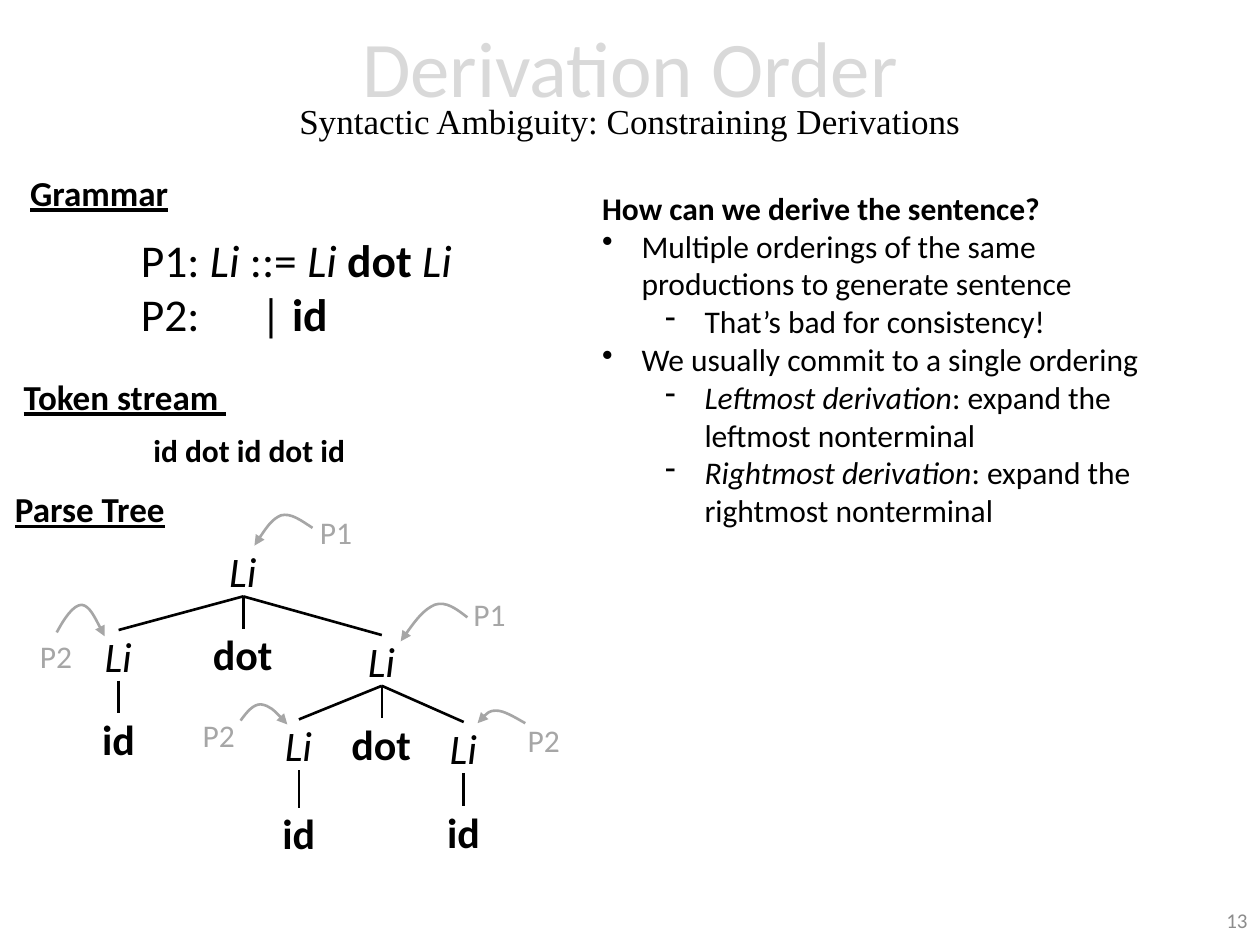
from lxml import etree
from pptx import Presentation
from pptx.dml.color import RGBColor
from pptx.enum.shapes import MSO_CONNECTOR
from pptx.enum.text import MSO_ANCHOR, MSO_AUTO_SIZE, PP_ALIGN
from pptx.oxml.ns import qn
from pptx.util import Pt

LINE = MSO_CONNECTOR.STRAIGHT
MIDDLE = MSO_ANCHOR.MIDDLE
NONE, GROW = MSO_AUTO_SIZE.NONE, MSO_AUTO_SIZE.SHAPE_TO_FIT_TEXT
LEFT, CENTER, RIGHT = PP_ALIGN.LEFT, PP_ALIGN.CENTER, PP_ALIGN.RIGHT
BLACK = RGBColor(0, 0, 0)
PALE = RGBColor(0xD9, 0xD9, 0xD9)
GRAY = RGBColor(0xA6, 0xA6, 0xA6)
DIM = RGBColor(0x8C, 0x8C, 0x8C)
BOLD, SLANT = {"bold": True}, {"italic": True}

deck = Presentation()
deck.slide_width, deck.slide_height = Pt(720), Pt(540)
slide = deck.slides.add_slide(deck.slide_layouts[5])
shapes = slide.shapes


def write(para, text, size, color=BLACK, **extra):
    run = para.add_run()
    run.text = text
    form = {"name": "Calibri", "size": Pt(size), **extra}
    for key, value in form.items():
        setattr(run.font, key, value)
    run.font.color.rgb = color


def add_box(left, top, width, height, **extra):
    frame = shapes.add_textbox(Pt(left), Pt(top), Pt(width), Pt(height)).text_frame
    form = {"word_wrap": True, "auto_size": NONE, **extra}
    for key, value in form.items():
        setattr(frame, key, value)
    return frame


title = shapes.title
spot = {"left": 0, "top": 0.7, "width": 720, "height": 104.4}
for key, value in spot.items():
    setattr(title, key, Pt(value))
title.text_frame.auto_size = NONE
title.text_frame.vertical_anchor = MIDDLE
para = title.text_frame.paragraphs[0]
para.alignment, para.line_spacing = CENTER, 0.7
write(para, "Derivation Order", 45, PALE)
para.add_line_break()
write(para, "Syntactic Ambiguity: Constraining Derivations", 20, name="Times New Roman")

para = add_box(558, 511.2, 162, 28.8, vertical_anchor=MIDDLE).paragraphs[0]
para.alignment = RIGHT
write(para, "13", 12, DIM)

heads = [
    ("Grammar", 10.1, 97.2, 104.4, 70.6),
    ("Token stream ", 6.5, 213.8, 161.3, 29.5),
    ("Parse Tree", 1.4, 277.9, 104.4, 43.9),
]
for text, *place in heads:
    para = add_box(*place).paragraphs[0]
    para.line_spacing, para.space_before = 0.9, Pt(10)
    write(para, text, 20, bold=True, underline=True)

rules = add_box(73.4, 128.9, 221.8, 70.6, auto_size=GROW)
para = rules.paragraphs[0]
for text, form in [("P1:", {}), (" Li", SLANT), (" ::= ", {}),
                   ("Li ", SLANT), ("dot ", BOLD), ("Li", SLANT)]:
    write(para, text, 26, **form)
para = rules.add_paragraph()
write(para, "P2:\t| ", 26)
write(para, "id", 26, bold=True)
tabs = etree.SubElement(para._p.get_or_add_pPr(), qn("a:tabLst"))
etree.SubElement(tabs, qn("a:tab"), pos=str(Pt(68.5)), algn="l")

tokens = add_box(80.6, 242.6, 129.6, 28.8, word_wrap=False, auto_size=GROW)
write(tokens.paragraphs[0], "id dot id dot id", 18, bold=True)

HIGH = 29
widths = {"Li": 30.2, "dot": 49, "id": 33.1}
nodes = [
    ("Li", 139, 311.8, None),
    ("Li", 67.8, 360, 0),
    ("dot", 139, 359.3, 0),
    ("Li", 218.2, 362.9, 0),
    ("id", 67.8, 407.5, 1),
    ("Li", 170.8, 411.1, 3),
    ("dot", 218.2, 410.4, 3),
    ("Li", 265, 412.6, 3),
    ("id", 170.8, 461.5, 5),
    ("id", 265, 460.8, 7),
]
for text, mid, top, parent in nodes:
    wide = widths[text]
    frame = add_box(mid - wide / 2, top, wide, HIGH, word_wrap=False,
                    auto_size=GROW, margin_top=0, margin_bottom=0)
    write(frame.paragraphs[0], text, 24, **(SLANT if text == "Li" else BOLD))
    if parent is not None:
        start, base = nodes[parent][1:3]
        edge = shapes.add_connector(LINE, Pt(start), Pt(base + HIGH), Pt(mid), Pt(top))
        edge.line.color.rgb, edge.line.width = BLACK, Pt(1.5)
        etree.SubElement(edge._element.spPr, qn("a:effectLst"))

marks = [
    ("P2", 294.5, 408.2), ("P2", 108.7, 405.4), ("P1", 263.5, 336.2),
    ("P2", 15.8, 360.7), ("P1", 175.7, 289.4),
]
for text, left, top in marks:
    frame = add_box(left, top, 33.1, HIGH, word_wrap=False, auto_size=GROW)
    write(frame.paragraphs[0], text, 18, GRAY)

curves = [
    [(178.6, 301.7), (172.1, 297.4), (166.3, 293), (160.6, 294.5),
     (155.5, 296.6), (150.5, 303.8), (145.4, 311.8)],
    [(267.1, 352.8), (260.6, 347.8), (254.9, 343.4), (248.4, 345.6),
     (241.9, 348.5), (235.4, 357.1), (229, 366.5)],
    [(32.4, 361.4), (36.7, 353.5), (41.8, 345.6), (46.8, 345.6),
     (51.1, 346.3), (55.4, 355), (59.8, 363.6)],
    [(137.5, 411.8), (141.1, 406.8), (144.7, 402.5), (149, 402.5),
     (154.1, 403.2), (159.1, 408.2), (164.2, 414)],
    [(300.2, 413.3), (293.8, 409.7), (288, 406.1), (283.7, 406.1),
     (279.4, 406.1), (275.8, 409.7), (272.9, 413.3)],
]
for curve in curves:
    first, *rest = [(Pt(x), Pt(y)) for x, y in curve]
    pen = shapes.build_freeform(*first)
    pen.add_line_segments(rest, close=False)
    arrow = pen.convert_to_shape()
    arrow.shadow.inherit = False
    arrow.fill.background()
    arrow.line.color.rgb, arrow.line.width = GRAY, Pt(1.5)
    etree.SubElement(arrow.line._get_or_add_ln(), qn("a:tailEnd"), type="triangle")
    steps = list(arrow._element.iter(qn("a:lnTo")))
    trail = steps[0].getparent()
    for start in range(0, len(steps), 3):
        bend = etree.SubElement(trail, qn("a:cubicBezTo"))
        for step in steps[start:start + 3]:
            bend.append(step[0])
            trail.remove(step)

points = [
    (None, 0, [("How can we derive the sentence?", BOLD)]),
    ("•", 22.5, [("Multiple orderings of the same productions to generate sentence", {})]),
    ("-", 58.5, [("That’s bad for consistency!", {})]),
    ("•", 22.5, [("We usually commit to a single ordering", {})]),
    ("-", 58.5, [("Leftmost derivation", SLANT), (": expand the leftmost nonterminal", {})]),
    ("-", 58.5, [("Rightmost derivation", SLANT), (": expand the rightmost nonterminal", {})]),
]
panel = add_box(337, 104.4, 328.3, 225.4, auto_size=GROW)
for row, (mark, left, runs) in enumerate(points):
    para = panel.add_paragraph() if row else panel.paragraphs[0]
    para.alignment = LEFT
    for text, form in runs:
        write(para, text, 18, **form)
    if mark:
        para.level = int(mark == "-")
        props = para._p.get_or_add_pPr()
        props.set("marL", str(Pt(left)))
        props.set("indent", str(-Pt(22.5)))
        etree.SubElement(props, qn("a:buChar"), char=mark)

deck.save("out.pptx")
